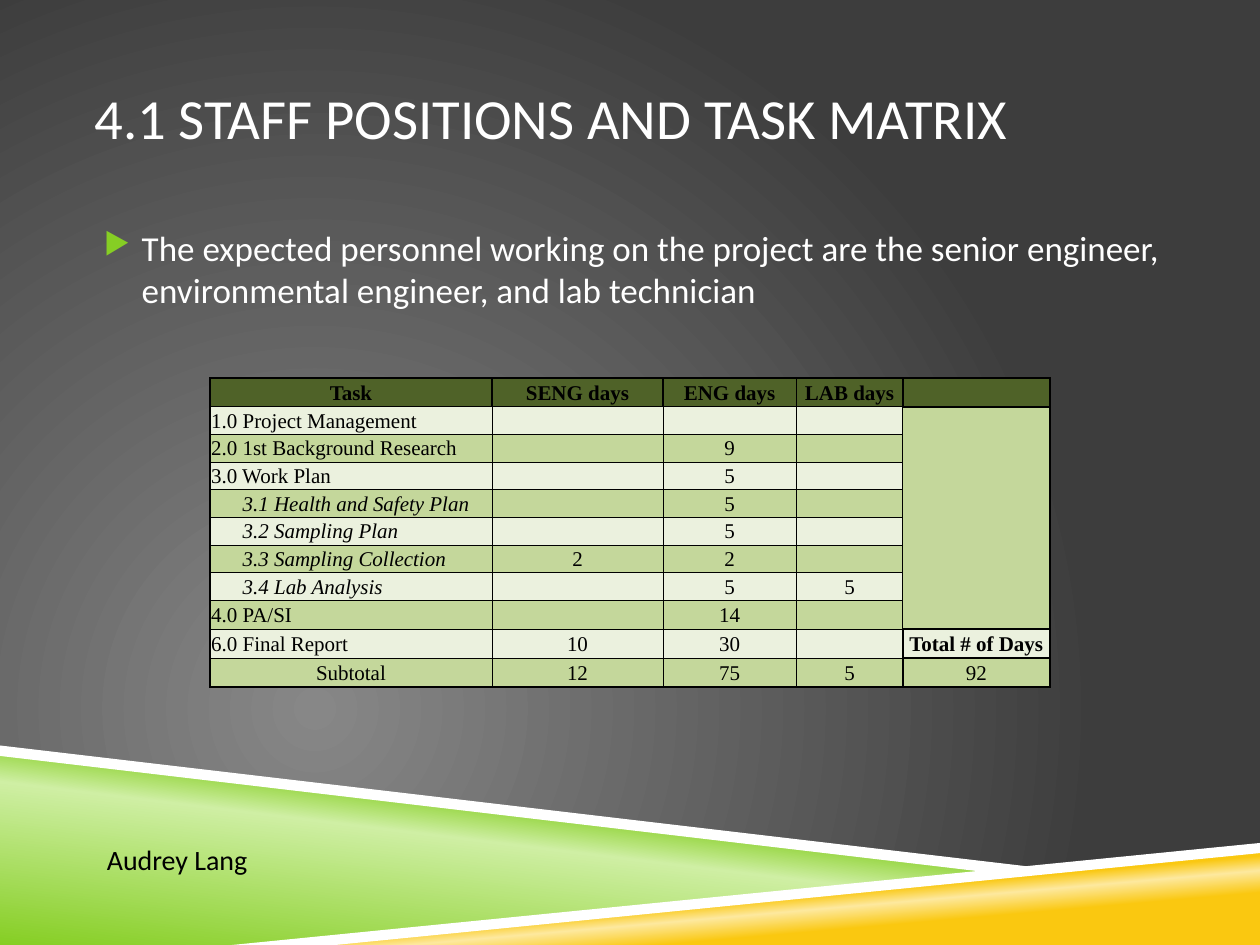
import pptx
import pptx.dml.color
import pptx.enum.text
import pptx.oxml
import pptx.oxml.ns
import pptx.util
from lxml import etree

Pt = pptx.util.Pt
qn = pptx.oxml.ns.qn
RGBColor = pptx.dml.color.RGBColor
PP_ALIGN = pptx.enum.text.PP_ALIGN
MSO_ANCHOR = pptx.enum.text.MSO_ANCHOR

WHITE = RGBColor(0xFF, 0xFF, 0xFF)
BLACK = RGBColor(0x00, 0x00, 0x00)
GREY = RGBColor(0x87, 0x87, 0x87)
CHARCOAL = RGBColor(0x3D, 0x3D, 0x3D)
GREEN = RGBColor(0x86, 0xCE, 0x24)
PALE_GREEN = RGBColor(0xCF, 0xEF, 0xA4)
GOLD = RGBColor(0xFA, 0xC8, 0x10)
PALE_GOLD = RGBColor(0xFD, 0xE9, 0x9F)
HEADER_FILL = RGBColor(0x4F, 0x62, 0x28)
LIGHT_ROW = RGBColor(0xEB, 0xF1, 0xDE)
DARK_ROW = RGBColor(0xC4, 0xD7, 0x9B)

TASK_ROWS = [
    ("Task", "SENG days", "ENG days", "LAB days", ""),
    ("1.0 Project Management", "", "", "", ""),
    ("2.0 1st Background Research", "", "9", "", ""),
    ("3.0 Work Plan", "", "5", "", ""),
    ("3.1 Health and Safety Plan", "", "5", "", ""),
    ("3.2 Sampling Plan", "", "5", "", ""),
    ("3.3 Sampling Collection", "2", "2", "", ""),
    ("3.4 Lab Analysis", "", "5", "5", ""),
    ("4.0 PA/SI", "", "14", "", ""),
    ("6.0 Final Report", "10", "30", "", "Total # of Days"),
    ("Subtotal", "12", "75", "5", "92"),
]
COLUMN_SHARES = (161.2, 97.7, 76.2, 60.9, 84)
SUBTASKS = range(4, 8)
TALL_ROWS = (0, 8, 9, 10)
LAST_ROW, LAST_COL = len(TASK_ROWS) - 1, len(COLUMN_SHARES) - 1


def set_gradient(fill, element, stops, direction, **attributes):
    """Give fill the (percent, colour) stops; direction is the a:lin or a:path tag."""
    fill.gradient()
    grad = element.find(".//" + qn("a:gradFill"))
    for child in list(grad):
        grad.remove(child)
    stop_list = etree.SubElement(grad, qn("a:gsLst"))
    for percent, colour in stops:
        stop = etree.SubElement(stop_list, qn("a:gs"), pos=str(percent * 1000))
        etree.SubElement(stop, qn("a:srgbClr"), val=str(colour))
    return etree.SubElement(grad, qn(direction), **attributes)


def draw_background(slide):
    circle = set_gradient(slide.background.fill, slide._element,
                          [(0, GREY), (100, CHARCOAL)], "a:path", path="circle")
    etree.SubElement(circle, qn("a:fillToRect"),
                     l="50000", t="100000", r="100000", b="50000")


def add_polygon(slide, points):
    start, *rest = [(Pt(x), Pt(y)) for x, y in points]
    builder = slide.shapes.build_freeform(*start, scale=1.0)
    builder.add_line_segments(rest, close=True)
    sp = builder.convert_to_shape()
    sp.shadow.inherit = False
    sp.line.fill.background()
    return sp


def draw_wedges(slide, width, height):
    """Draw the green and gold wedges along the bottom and their white edges."""
    wedges = [
        ([(0, 430), (570, 498.5), (144, height), (0, height)],
         [(0, GREEN), (52, PALE_GREEN), (66, GREEN)], 277),
        ([(142.5, height), (width, 484), (width, height)],
         [(28, GOLD), (40, PALE_GOLD), (48, GOLD)], 265),
    ]
    for points, stops, angle in wedges:
        sp = add_polygon(slide, points)
        set_gradient(sp.fill, sp._element, stops, "a:lin",
                     ang=str(angle * 60000), scaled="0")
    edges = [
        [(0, 426), (0, 432), (569, 499), (599, 496.5)],
        [(width, 481.7), (132.5, height), (191.5, height), (width, 487.5)],
    ]
    for points in edges:
        sp = add_polygon(slide, points)
        sp.fill.solid()
        sp.fill.fore_color.rgb = WHITE


def format_run(r, size, colour, name="Calibri", bold=False, italic=False):
    r.font.size, r.font.name = Pt(size), name
    r.font.bold, r.font.italic = bold, italic
    r.font.color.rgb = colour


def add_text(slide, box, text, size, colour, side_margin=0, anchor=MSO_ANCHOR.TOP):
    tf = slide.shapes.add_textbox(*map(Pt, box)).text_frame
    tf.word_wrap = True
    tf.vertical_anchor = anchor
    tf.margin_left = tf.margin_right = Pt(side_margin)
    p = tf.paragraphs[0]
    p.text = text
    format_run(p.runs[0], size, colour)
    return p


def add_bullet(p):
    pPr = p._p.get_or_add_pPr()
    pPr.set("marL", str(Pt(27)))
    pPr.set("indent", str(-Pt(21.6)))
    colour = etree.SubElement(pPr, qn("a:buClr"))
    etree.SubElement(colour, qn("a:srgbClr"), val=str(GREEN))
    etree.SubElement(pPr, qn("a:buSzPct"), val="85000")
    etree.SubElement(pPr, qn("a:buChar"), char="▶")


def border_widths(row, col):
    """Return left, right, top and bottom widths: thick outside and round totals."""
    header, last = row == 0, col == LAST_COL
    totals = row >= LAST_ROW - 1
    thick = (
        col == 0 or header or (last and totals),
        last or header or (col == LAST_COL - 1 and totals),
        header or last,
        row == LAST_ROW or last,
    )
    return [1 if side else 0.5 for side in thick]


def set_borders(cell, widths):
    tcPr = cell._tc.get_or_add_tcPr()
    for i, (side, width) in enumerate(zip("LRTB", widths)):
        ln = etree.Element(qn("a:ln" + side), w=str(Pt(width)))
        fill = etree.SubElement(ln, qn("a:solidFill"))
        etree.SubElement(fill, qn("a:srgbClr"), val=str(BLACK))
        tcPr.insert(i, ln)


def fill_cell(cell, row, col, text):
    subtask = col == 0 and row in SUBTASKS
    cell.margin_left = Pt(18.7 if subtask else 0.7)
    cell.margin_right = cell.margin_top = Pt(0.7)
    cell.margin_bottom = 0
    cell.vertical_anchor = MSO_ANCHOR.MIDDLE
    cell.fill.solid()
    if row == 0:
        cell.fill.fore_color.rgb = HEADER_FILL
    else:
        dark = row % 2 == 0 or cell.is_merge_origin
        cell.fill.fore_color.rgb = DARK_ROW if dark else LIGHT_ROW
    p = cell.text_frame.paragraphs[0]
    if text:
        p.text = text
        bold = row == 0 or (row, col) == (LAST_ROW - 1, LAST_COL)
        format_run(p.runs[0], 12, BLACK, "Times New Roman", bold, subtask)
        task_name = col == 0 and 0 < row < LAST_ROW
        p.alignment = PP_ALIGN.LEFT if task_name else PP_ALIGN.CENTER
    else:
        etree.SubElement(p._p, qn("a:endParaRPr"), sz="1200")


def add_task_table(slide, box):
    table = slide.shapes.add_table(len(TASK_ROWS), len(COLUMN_SHARES),
                                   *map(Pt, box)).table
    table.first_row = table.horz_banding = False
    for column, share in zip(table.columns, COLUMN_SHARES):
        column.width = Pt(box[2] * share / sum(COLUMN_SHARES))
    for i, row in enumerate(table.rows):
        row.height = Pt(16.5 if i in TALL_ROWS else 15.8)
    table.cell(1, LAST_COL).merge(table.cell(8, LAST_COL))
    for i, texts in enumerate(TASK_ROWS):
        for j, text in enumerate(texts):
            cell = table.cell(i, j)
            fill_cell(cell, i, j, text)
            if not cell.is_spanned:
                set_borders(cell, border_widths(i, j))


def main():
    prs = pptx.Presentation()
    prs.slide_width, prs.slide_height = Pt(720), Pt(540)
    slide = prs.slides.add_slide(prs.slide_layouts[6])
    draw_background(slide)
    draw_wedges(slide, 720, 540)
    add_text(slide, (54, 21.6, 612, 90), "4.1 STAFF POSITIONS AND TASK MATRIX",
             32.4, WHITE, anchor=MSO_ANCHOR.MIDDLE)
    add_bullet(add_text(
        slide, (54, 126, 612, 70.5),
        "The expected personnel working on the project are the senior engineer, "
        "environmental engineer, and lab technician", 20, WHITE))
    add_text(slide, (54, 478, 101.5, 26.6), "Audrey Lang", 16, BLACK, side_margin=7.2)
    add_task_table(slide, (120, 216, 480, 176.6))
    prs.save("out.pptx")


if __name__ == "__main__":
    main()
